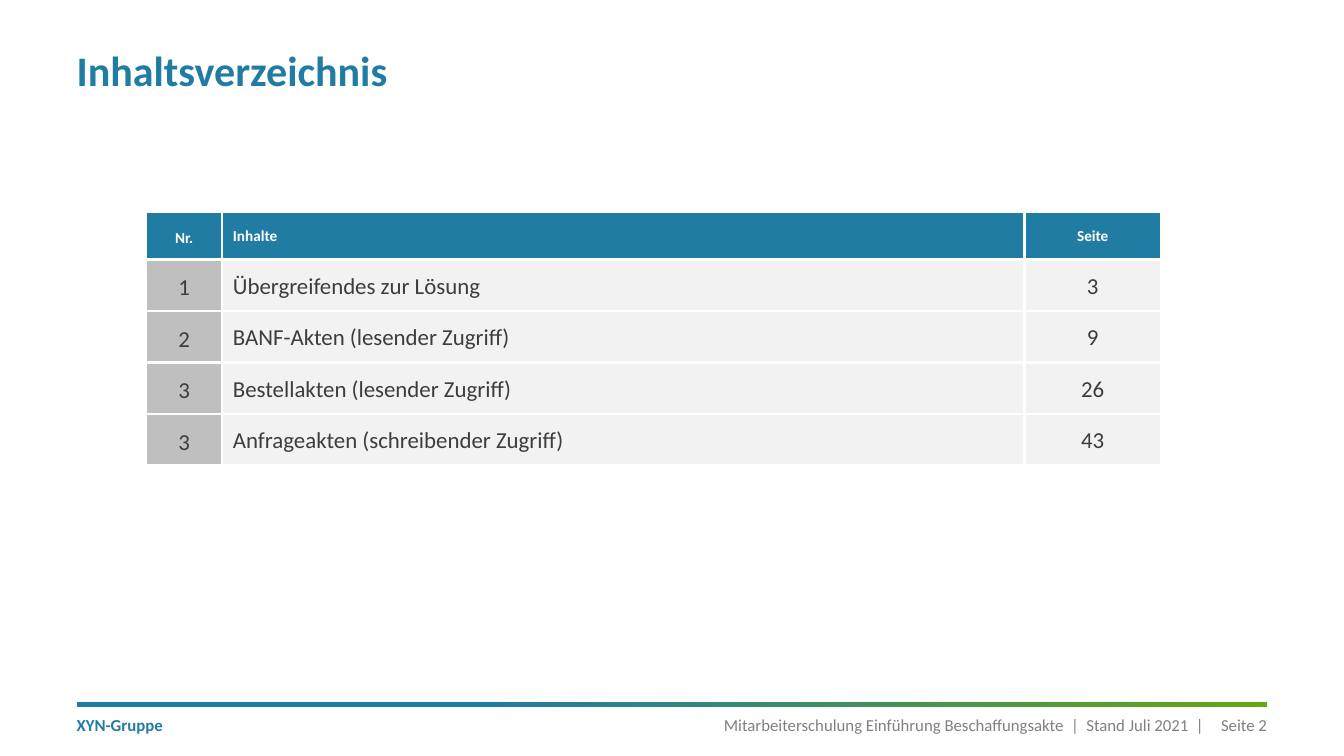
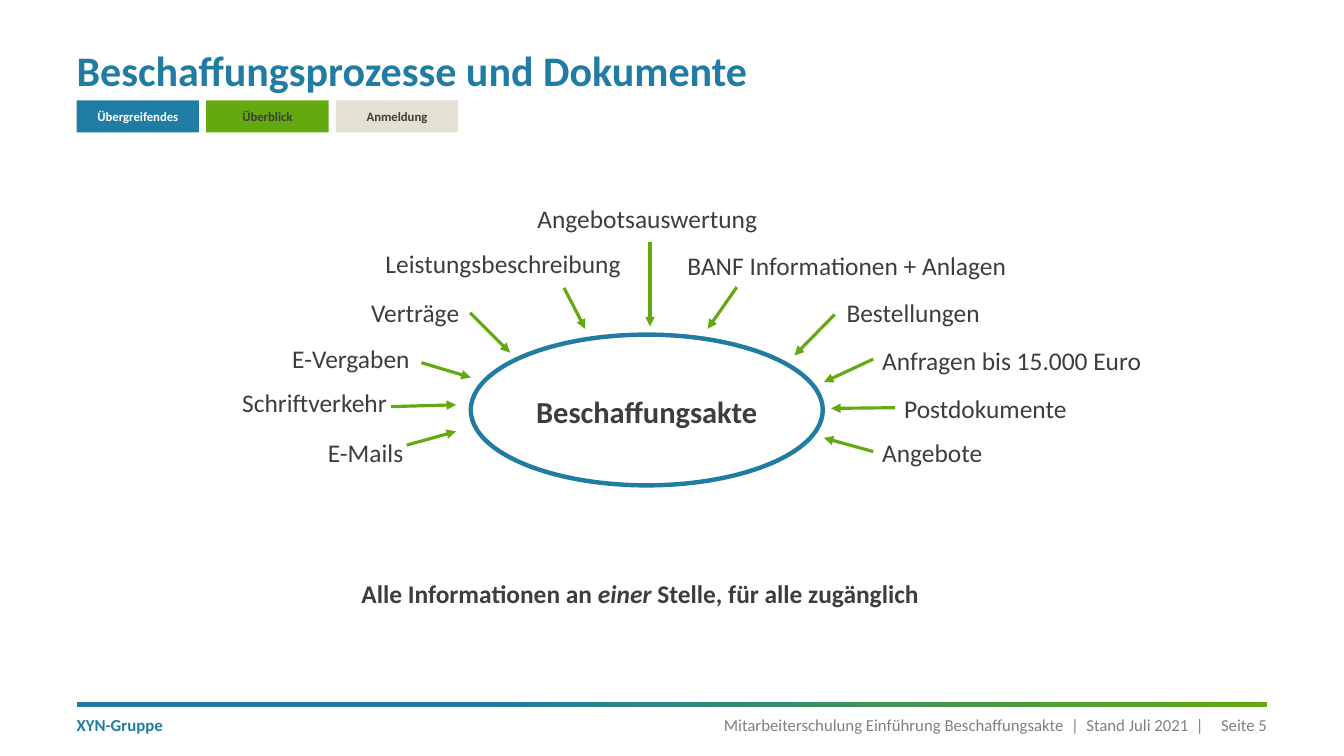
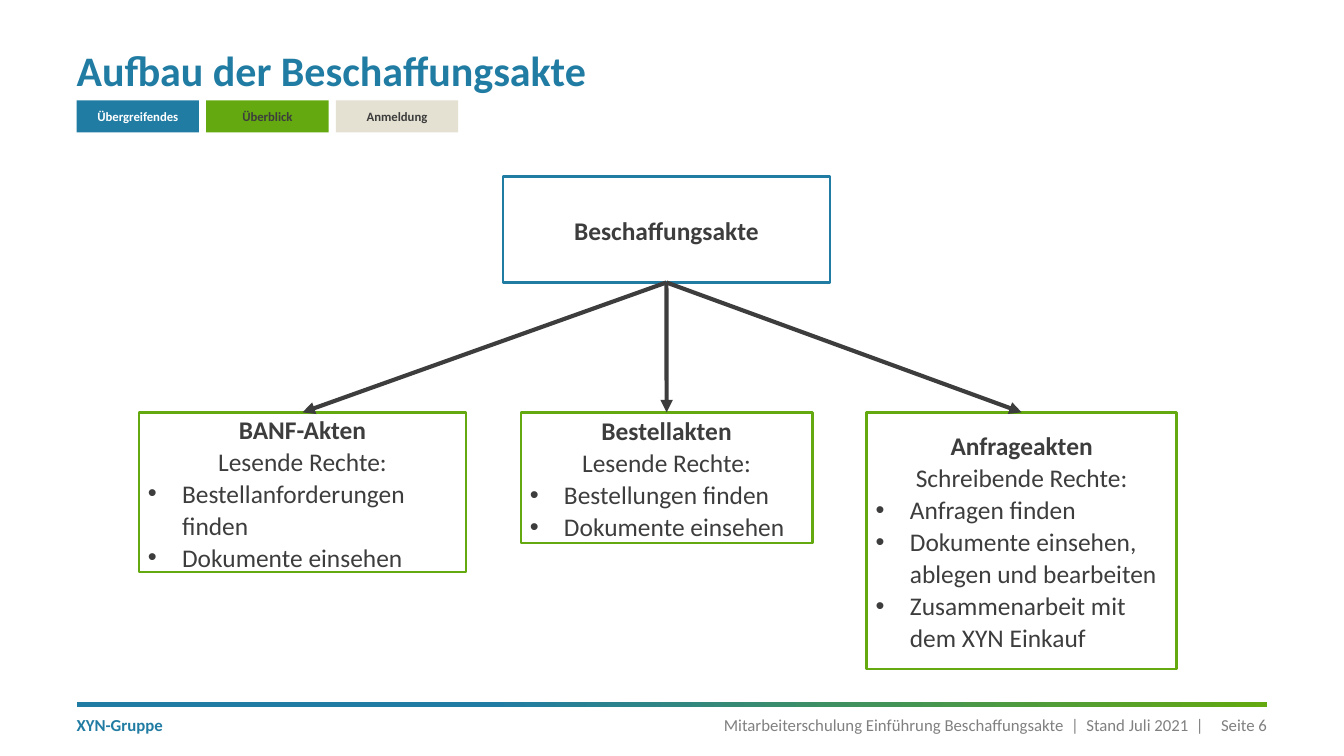
"""Build three training slides about the procurement file."""
import pptx
import pptx.chart.data
import pptx.dml.color
import pptx.enum.shapes
import pptx.enum.text
import pptx.oxml
import pptx.oxml.ns
import pptx.util
from lxml import etree

Cm = pptx.util.Cm
Pt = pptx.util.Pt
RGBColor = pptx.dml.color.RGBColor
MSO_SHAPE = pptx.enum.shapes.MSO_SHAPE
ALIGN = pptx.enum.text.PP_ALIGN
ANCHOR = pptx.enum.text.MSO_ANCHOR
qn = pptx.oxml.ns.qn

BLUE = RGBColor(0x21, 0x7C, 0xA3)
GREEN = RGBColor(0x63, 0xA9, 0x0F)
SAND = RGBColor(0xE4, 0xE1, 0xD2)
DARK = RGBColor(0x3D, 0x3D, 0x3D)
GREY = RGBColor(0x80, 0x80, 0x80)
MID_GREY = RGBColor(0xBF, 0xBF, 0xBF)
PALE_GREY = RGBColor(0xF2, 0xF2, 0xF2)
WHITE = RGBColor(0xFF, 0xFF, 0xFF)

FONT = "Calibri"
TITLE = {"size": Pt(33.1), "bold": True}
FOOTER = {"size": Pt(13.2), "bold": False}
BODY = {"size": Pt(20), "bold": False}
STRONG = {"size": Pt(20), "bold": True}
NO_MARGINS = dict.fromkeys(("margin_left", "margin_top", "margin_right", "margin_bottom"), 0)


def add_box(s, at, paras, color=DARK, shape=None, fill=None, line=None,
            align=ALIGN.LEFT, spacing=1.05, frame=None):
    """Add a text box or shape; paras holds (runs, bulleted), runs hold (text, format)."""
    at = [Cm(v) for v in at]
    if shape is None:
        sp = s.shapes.add_textbox(*at)
    else:
        sp = s.shapes.add_shape(shape, *at)
        sp.shadow.inherit = False
        sp.fill.solid()
        sp.fill.fore_color.rgb = fill
        if line:
            sp.line.color.rgb, sp.line.width = line
        else:
            sp.line.fill.background()
    tf = sp.text_frame
    anchor = ANCHOR.TOP if shape is None else ANCHOR.MIDDLE
    for name, value in {"word_wrap": True, "vertical_anchor": anchor, **(frame or {})}.items():
        setattr(tf, name, value)
    for i, (runs, bulleted) in enumerate(paras):
        p = tf.paragraphs[0] if i == 0 else tf.add_paragraph()
        p.alignment = ALIGN.LEFT if bulleted else align
        p.line_spacing = spacing
        if bulleted:
            pPr = p._p.get_or_add_pPr()
            pPr.set("marL", str(Cm(0.95)))
            pPr.set("indent", str(-Cm(0.95)))
            etree.SubElement(pPr, qn("a:buFont")).set("typeface", "Arial")
            etree.SubElement(pPr, qn("a:buChar")).set("char", "•")
        for text, fmt in runs:
            r = p.add_run()
            r.text = text
            r.font.color.rgb = color
            for name, value in {"name": FONT, **fmt}.items():
                setattr(r.font, name, value)
    return sp


def add_arrow(s, ends, color, width):
    """Add a straight arrow from (x1, y1) to (x2, y2)."""
    cn = s.shapes.add_connector(pptx.enum.shapes.MSO_CONNECTOR.STRAIGHT, *[Cm(v) for v in ends])
    cn.line.color.rgb = color
    cn.line.width = Pt(width)
    etree.SubElement(cn.line._get_or_add_ln(), qn("a:tailEnd")).set("type", "triangle")
    etree.SubElement(cn._element.spPr, qn("a:effectLst"))
    return cn


prs = pptx.Presentation()
prs.slide_width, prs.slide_height = Cm(37.34), Cm(21.01)

pages = [
    ("Inhaltsverzeichnis", 2, False),
    ("Beschaffungsprozesse und Dokumente", 5, True),
    ("Aufbau der Beschaffungsakte", 6, True),
]
tabs = [("Übergreifendes", BLUE, WHITE), ("Überblick", GREEN, DARK), ("Anmeldung", SAND, DARK)]

for title, number, has_tabs in pages:
    s = prs.slides.add_slide(prs.slide_layouts[6])
    band = add_box(s, (2.13, 19.51, 33.07, 0.15), [], shape=MSO_SHAPE.RECTANGLE, fill=BLUE)
    band.fill.gradient()
    band.fill.gradient_angle = 0
    for stop, (position, color) in zip(band.fill.gradient_stops, [(0.35, BLUE), (1, GREEN)]):
        stop.position = position
        stop.color.rgb = color
    footers = [
        (2.13, 3.2, "XYN-Gruppe", BLUE, ALIGN.LEFT, True),
        (5.33, 28.12, "Mitarbeiterschulung Einführung Beschaffungsakte  |  Stand Juli 2021  |",
         GREY, ALIGN.RIGHT, False),
        (32.84, 2.36, f"Seite {number}", GREY, ALIGN.RIGHT, False),
    ]
    for x, w, text, color, align, bold in footers:
        add_box(s, (x, 19.86, w, 0.74), [([(text, {**FOOTER, "bold": bold})], False)],
                color, align=align, spacing=1.0, frame=NO_MARGINS)
    add_box(s, (2.13, 1.35, 32.94, 2.95), [([(title, TITLE)], False)], BLUE,
            spacing=0.95, frame=NO_MARGINS)
    if has_tabs:
        for i, (text, fill, color) in enumerate(tabs):
            add_box(s, (2.13 + 3.6 * i, 2.79, 3.4, 0.89),
                    [([(text, {"size": Pt(10), "bold": True})], False)], color,
                    MSO_SHAPE.RECTANGLE, fill, align=ALIGN.CENTER, spacing=1.0)

contents_slide, documents_slide, structure_slide = prs.slides

rows = [
    ("Nr.", "Inhalte", "Seite"),
    ("1", "Übergreifendes zur Lösung", "3"),
    ("2", "BANF-Akten (lesender Zugriff)", "9"),
    ("3", "Bestellakten (lesender Zugriff)", "26"),
    ("3", "Anfrageakten (schreibender Zugriff)", "43"),
]
columns = [
    (2.11, ALIGN.CENTER, MID_GREY, 0.2),
    (22.3, ALIGN.LEFT, PALE_GREY, 0.3),
    (3.78, ALIGN.CENTER, PALE_GREY, 0.3),
]
table = contents_slide.shapes.add_table(
    len(rows), len(columns), Cm(4.06), Cm(5.89), Cm(28.19), Cm(7.04)).table
table.horz_banding = False
for c, (width, align, body_fill, bottom) in enumerate(columns):
    table.columns[c].width = Cm(width)
    for r, row in enumerate(rows):
        header = r == 0
        table.rows[r].height = Cm(1.32 if header else 1.43)
        cell = table.cell(r, c)
        frame = {"margin_left": Cm(0.3), "margin_right": Cm(0.3), "margin_top": Cm(0.36),
                 "margin_bottom": Cm(bottom), "vertical_anchor": ANCHOR.MIDDLE}
        for name, value in frame.items():
            setattr(cell, name, value)
        tcPr = cell._tc.get_or_add_tcPr()
        for side in ("a:lnL", "a:lnR", "a:lnT", "a:lnB"):
            ln = etree.SubElement(tcPr, qn(side))
            ln.set("w", str(Pt(2.25)))
            color = etree.SubElement(etree.SubElement(ln, qn("a:solidFill")), qn("a:srgbClr"))
            color.set("val", str(WHITE))
        cell.fill.solid()
        cell.fill.fore_color.rgb = BLUE if header else body_fill
        p = cell.text_frame.paragraphs[0]
        p.alignment = align
        run = p.add_run()
        run.text = row[c]
        run.font.color.rgb = WHITE if header else DARK
        for name, value in {"name": FONT, "size": Pt(12 if header else 18), "bold": header}.items():
            setattr(run.font, name, value)

s = documents_slide
add_box(s, (13.08, 9.3, 9.78, 4.19),
        [([("Beschaffungsakte", {"size": Pt(24), "bold": True})], False)],
        shape=MSO_SHAPE.OVAL, fill=WHITE, line=(BLUE, Pt(3.5)), align=ALIGN.CENTER)
documents = [
    ("E-Mails", 8.86, 11.99, 6.81, (11.3, 12.37, 12.67, 11.99)),
    ("Schriftverkehr", 6.48, 10.59, 6.81, (10.87, 11.3, 12.67, 11.25)),
    ("E-Vergaben", 7.87, 9.37, 8, (11.71, 10.08, 13.08, 10.49)),
    ("Verträge", 10.06, 8.08, 8, (13.06, 8.69, 14.17, 9.8)),
    ("Leistungsbeschreibung", 10.46, 6.73, 7.39, (15.67, 8, 16.26, 9.14)),
    ("Angebotsauswertung", 14.48, 5.49, 7.01, (18.06, 6.73, 18.06, 9.07)),
    ("BANF Informationen + Anlagen", 18.85, 6.78, 10.24, (20.47, 7.98, 19.66, 9.14)),
    ("Bestellungen", 23.27, 8.08, 6.81, (23.19, 8.74, 22.07, 9.88)),
    ("Anfragen bis 15.000 Euro", 24.26, 9.42, 8, (24.26, 9.98, 22.89, 10.62)),
    ("Postdokumente", 24.87, 10.77, 6.81, (24.87, 11.33, 23.09, 11.35)),
    ("Angebote", 24.26, 11.99, 7.39, (24.26, 12.55, 22.89, 12.17)),
]
for text, x, y, w, ends in documents:
    align = ALIGN.CENTER if text == "Angebotsauswertung" else ALIGN.LEFT
    add_box(s, (x, y, w, 1.12), [([(text, BODY)], False)], align=align)
    add_arrow(s, ends, GREEN, 2.5)
message = [("Alle Informationen an ", STRONG), ("einer", {**STRONG, "italic": True}),
           (" Stelle, für alle zugänglich", STRONG)]
add_box(s, (9.68, 15.9, 16.21, 1.12), [(message, False)], align=ALIGN.CENTER)

s = structure_slide
root = add_box(s, (13.97, 4.9, 9.09, 2.95), [([("Beschaffungsakte", STRONG)], False)],
               shape=MSO_SHAPE.RECTANGLE, fill=WHITE, line=(BLUE, Pt(2)), align=ALIGN.CENTER)
files = [
    (3.86, 9.09, 4.44, "BANF-Akten", "Lesende Rechte:",
     ["Bestellanforderungen finden", "Dokumente einsehen"]),
    (14.47, 8.1, 3.63, "Bestellakten", "Lesende Rechte:",
     ["Bestellungen finden", "Dokumente einsehen"]),
    (24.08, 8.61, 7.14, "Anfrageakten", "Schreibende Rechte:",
     ["Anfragen finden", "Dokumente einsehen, ablegen und bearbeiten",
      "Zusammenarbeit mit dem XYN Einkauf"]),
]
for x, w, h, name, rights, tasks in files:
    paras = [([(name, STRONG)], False), ([(rights, BODY)], False)]
    paras += [([(task, BODY)], True) for task in tasks]
    sp = add_box(s, (x, 11.46, w, h), paras, shape=MSO_SHAPE.RECTANGLE, fill=WHITE,
                 line=(GREEN, Pt(2)), align=ALIGN.CENTER)
    cn = add_arrow(s, (18.52, 7.85, x + w / 2, 11.46), DARK, 3.25)
    cn.begin_connect(root, 2)
    cn.end_connect(sp, 0)

prs.save("out.pptx")
